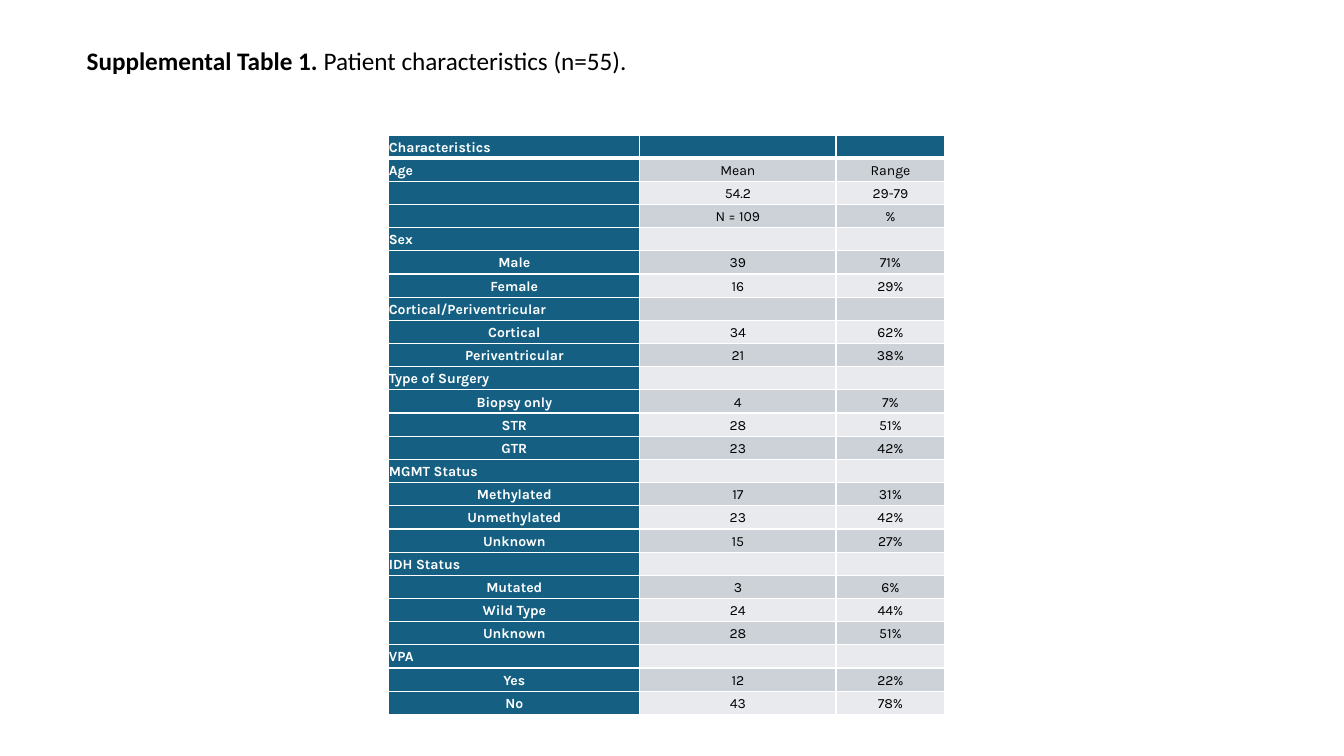
from lxml.etree import SubElement
from pptx import Presentation
from pptx.dml.color import RGBColor
from pptx.enum.text import MSO_ANCHOR, PP_ALIGN
from pptx.oxml.ns import qn
from pptx.util import Cm, Pt

TITLE = [("Supplemental Table 1. ", True), ("Patient characteristics (n=55).", False)]
HEADER = ("Characteristics", "", "")
GROUPS = [
    ("Age", "Mean", "Range", [("", "54.2", "29-79"), ("", "N = 109", "%")]),
    ("Sex", "", "", [("Male", "39", "71%"), ("Female", "16", "29%")]),
    ("Cortical/Periventricular", "", "",
     [("Cortical", "34", "62%"), ("Periventricular", "21", "38%")]),
    ("Type of Surgery", "", "",
     [("Biopsy only", "4", "7%"), ("STR", "28", "51%"), ("GTR", "23", "42%")]),
    ("MGMT Status", "", "",
     [("Methylated", "17", "31%"), ("Unmethylated", "23", "42%"), ("Unknown", "15", "27%")]),
    ("IDH Status", "", "",
     [("Mutated", "3", "6%"), ("Wild Type", "24", "44%"), ("Unknown", "28", "51%")]),
    ("VPA", "", "", [("Yes", "12", "22%"), ("No", "43", "78%")]),
]
COLORS = {"label": "156082", "odd": "CCD2D8", "even": "E8EAED",
          "white": "FFFFFF", "black": "000000"}
COLUMN_WIDTHS = [Cm(6.32), Cm(4.95), Cm(2.74)]
ROW_HEIGHT = Cm(0.584)


def add_span(para, text, font="Karla", size=10, color="black", bold=False):
    span = para.add_run()
    span.text = text
    span.font.name = font
    span.font.size = Pt(size)
    span.font.bold = bold
    span.font.color.rgb = RGBColor.from_string(COLORS[color])


def add_borders(cell, bottom):
    """Draw white lines round a cell, 1 pt except at the bottom."""
    properties = cell._tc.get_or_add_tcPr()
    for side, width in (("L", 1), ("R", 1), ("T", 1), ("B", bottom)):
        line = SubElement(properties, qn(f"a:ln{side}"), w=str(Pt(width)))
        fill = SubElement(line, qn("a:solidFill"))
        SubElement(fill, qn("a:srgbClr"), val=COLORS["white"])


def format_cell(cell, text, fill, align, bottom=1, **style):
    add_borders(cell, bottom)
    cell.fill.solid()
    cell.fill.fore_color.rgb = RGBColor.from_string(COLORS[fill])
    cell.margin_left = cell.margin_right = cell.margin_top = cell.margin_bottom = 0
    cell.vertical_anchor = MSO_ANCHOR.MIDDLE
    para = cell.text_frame.paragraphs[0]
    para.alignment = align
    para.line_spacing = Pt(13)
    if text:
        add_span(para, text, **style)
    else:
        para._p.get_or_add_endParaRPr().set("sz", "1000")


def add_title(page):
    title = page.shapes.title
    title.left, title.top, title.width, title.height = Cm(1.93), Cm(1.02), Cm(16.92), Cm(1.02)
    frame = title.text_frame
    frame.word_wrap = True
    frame.vertical_anchor = MSO_ANCHOR.TOP
    para = frame.paragraphs[0]
    para.alignment = PP_ALIGN.JUSTIFY
    for text, bold in TITLE:
        add_span(para, text, font="Calibri", size=18, bold=bold)


def add_characteristics(page):
    rows = [(HEADER, True)]
    for *heading, members in GROUPS:
        rows.append((heading, True))
        rows.extend((member, False) for member in members)

    table = page.shapes.add_table(len(rows), len(HEADER), Cm(9.8), Cm(3.4),
                                  sum(COLUMN_WIDTHS), ROW_HEIGHT * len(rows)).table
    for column, width in zip(table.columns, COLUMN_WIDTHS):
        column.width = width
    for r, (texts, is_heading) in enumerate(rows):
        table.rows[r].height = ROW_HEIGHT
        for c, text in enumerate(texts):
            is_label = c == 0
            dark = is_label or r == 0
            format_cell(
                table.cell(r, c), text,
                fill="label" if dark else ("even", "odd")[r % 2],
                align=PP_ALIGN.LEFT if is_label and is_heading else PP_ALIGN.CENTER,
                bottom=3 if r == 0 else 1,
                color="white" if dark else "black", bold=dark)


def main():
    deck = Presentation()
    deck.slide_width, deck.slide_height = Cm(33.87), Cm(19.05)
    page = deck.slides.add_slide(deck.slide_layouts[5])
    add_title(page)
    add_characteristics(page)
    deck.save("out.pptx")


if __name__ == "__main__":
    main()
